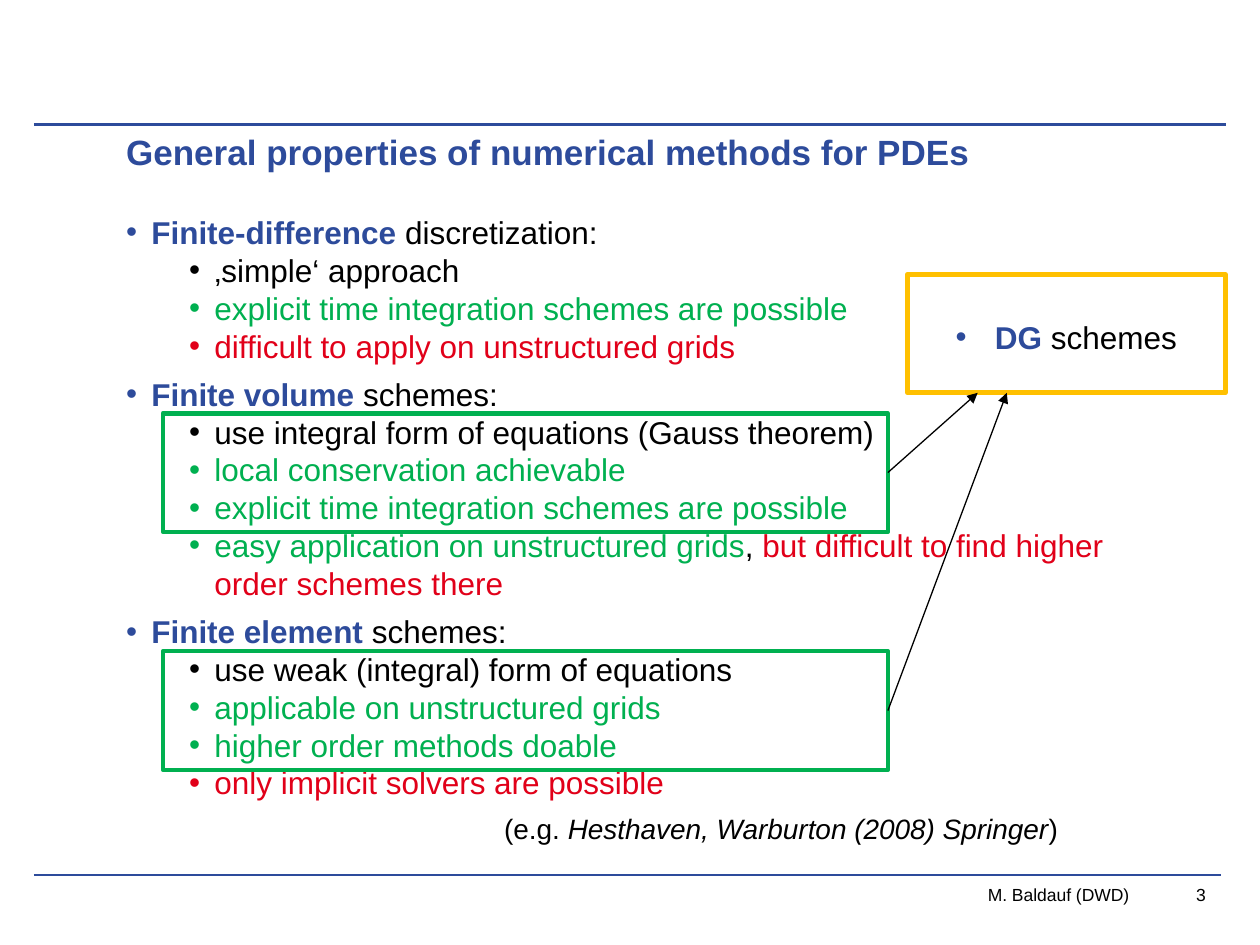
from lxml.etree import SubElement
from pptx import Presentation
from pptx.dml.color import RGBColor
from pptx.enum.shapes import MSO_CONNECTOR, MSO_SHAPE
from pptx.enum.text import MSO_ANCHOR, PP_ALIGN
from pptx.oxml.ns import qn
from pptx.util import Pt

BLUE = RGBColor(0x2D, 0x4B, 0x9B)
GREEN = RGBColor(0x00, 0xB0, 0x50)
RED = RGBColor(0xE1, 0x00, 0x19)
ORANGE = RGBColor(0xFF, 0xC0, 0x00)
BLACK = RGBColor(0, 0, 0)
WHITE = RGBColor(255, 255, 255)

TITLE = "General properties of numerical methods for PDEs"
METHODS = [
    ("Finite-difference ", "discretization:", [
        [("‚simple‘ approach", BLACK)],
        [("explicit time integration schemes are possible", GREEN)],
        [("difficult to apply on unstructured grids", RED)],
    ]),
    ("Finite volume ", "schemes:", [
        [("use integral form of equations (Gauss theorem)", BLACK)],
        [("local conservation achievable", GREEN)],
        [("explicit time integration schemes are possible", GREEN)],
        [("easy application on unstructured grids", GREEN), (", ", BLACK),
         ("but difficult to find higher order schemes there", RED)],
    ]),
    ("Finite element ", "schemes:", [
        [("use weak (integral) form of equations", BLACK)],
        [("applicable on unstructured grids", GREEN)],
        [("higher order methods doable", GREEN)],
        [("only implicit solvers are possible", RED)],
    ]),
]
CITATION = [("(e.g. ", False), ("Hesthaven, Warburton (2008) Springer", True), (")", False)]
FOOTER = [("M. Baldauf (DWD)", 360, 292.3, 7.2), ("3", 652.3, 36.7, 0)]

RULES = [(71.2, 700.4, 2), (500.2, 697.6, 1.19)]
RULE_LEFT = 19.4
BOX_LEFT, BOX_WIDTH, BOX_HEIGHT = 93, 414.4, 67.7
BOX_TOPS = [236.2, 372.2]
DG_LEFT, DG_TOP, DG_WIDTH = 518.4, 156.8, 181.8
ARROW_ENDS = [558.7, 575.3]


def add_run(p, text, size, color=BLACK, bold=False, italic=False):
    r = p.add_run()
    r.text = text
    r.font.name = "Arial"
    r.font.size = Pt(size)
    r.font.color.rgb = color
    r.font.bold = bold
    r.font.italic = italic


def indent(p, left, hang=0):
    pPr = p._p.get_or_add_pPr()
    pPr.set("marL", str(Pt(left)))
    pPr.set("indent", str(Pt(-hang)))
    if hang:
        SubElement(pPr, qn("a:buFont")).set("typeface", "Arial")
        SubElement(pPr, qn("a:buChar")).set("char", "•")


def setup_frame(sp, side, top=0, anchor=MSO_ANCHOR.TOP):
    tf = sp.text_frame
    tf.word_wrap = True
    tf.margin_left = tf.margin_right = Pt(side)
    tf.margin_top, tf.margin_bottom = Pt(top), Pt(0)
    tf.vertical_anchor = anchor
    return tf


def add_text_box(s, left, top, width, height, *frame):
    sp = s.shapes.add_textbox(Pt(left), Pt(top), Pt(width), Pt(height))
    return setup_frame(sp, *frame)


def add_box(s, left, top, width, color, weight, fill=None):
    sp = s.shapes.add_shape(MSO_SHAPE.RECTANGLE, Pt(left), Pt(top), Pt(width), Pt(BOX_HEIGHT))
    sp.shadow.inherit = False
    if fill is None:
        sp.fill.background()
    else:
        sp.fill.solid()
        sp.fill.fore_color.rgb = fill
    sp.line.color.rgb = color
    sp.line.width = Pt(weight)
    return sp


def add_line(s, x1, y1, x2, y2, color, weight, arrow=False):
    line = s.shapes.add_connector(MSO_CONNECTOR.STRAIGHT, Pt(x1), Pt(y1), Pt(x2), Pt(y2))
    line.line.color.rgb = color
    line.line.width = Pt(weight)
    if arrow:
        SubElement(line.line._get_or_add_ln(), qn("a:tailEnd")).set("type", "triangle")
    SubElement(line._element.spPr, qn("a:effectLst"))


def add_body(s):
    tf = add_text_box(s, 65, 71.3, 613.4, 422.6, 7.2, 3.6)
    p = tf.paragraphs[0]
    p.space_after = Pt(23)
    add_run(p, TITLE, 20, BLUE, bold=True)
    for name, kind, points in METHODS:
        p = tf.add_paragraph()
        indent(p, 14.4, 14.4)
        add_run(p, name, 18, BLUE, bold=True)
        add_run(p, kind, 18)
        for runs in points:
            p = tf.add_paragraph()
            p.level = 1
            indent(p, 50.4, 14.4)
            for text, color in runs:
                add_run(p, text, 18, color)
        p.space_after = Pt(6)
    p = tf.add_paragraph()
    indent(p, 216)
    for text, italic in CITATION:
        add_run(p, text, 16, italic=italic)


def main():
    prs = Presentation()
    prs.slide_width, prs.slide_height = Pt(720), Pt(540)
    s = prs.slides.add_slide(prs.slide_layouts[6])

    for y, right, weight in RULES:
        add_line(s, RULE_LEFT, y, right, y, BLUE, weight)
    add_body(s)
    for top in BOX_TOPS:
        add_box(s, BOX_LEFT, top, BOX_WIDTH, GREEN, 2.5)

    dg = add_box(s, DG_LEFT, DG_TOP, DG_WIDTH, ORANGE, 2.75, WHITE)
    p = setup_frame(dg, 7.2, 25).paragraphs[0]
    p.alignment = PP_ALIGN.CENTER
    indent(p, 22.5, 22.5)
    add_run(p, "DG ", 18, BLUE, bold=True)
    add_run(p, "schemes", 18)

    for top, end in zip(BOX_TOPS, ARROW_ENDS):
        add_line(s, BOX_LEFT + BOX_WIDTH, top + BOX_HEIGHT / 2,
                 end, DG_TOP + BOX_HEIGHT, BLACK, 0.75, arrow=True)

    for text, left, width, side in FOOTER:
        tf = add_text_box(s, left, 502.6, width, 17.3, side, 0, MSO_ANCHOR.MIDDLE)
        p = tf.paragraphs[0]
        p.alignment = PP_ALIGN.RIGHT
        add_run(p, text, 10)

    prs.save("out.pptx")


if __name__ == "__main__":
    main()
